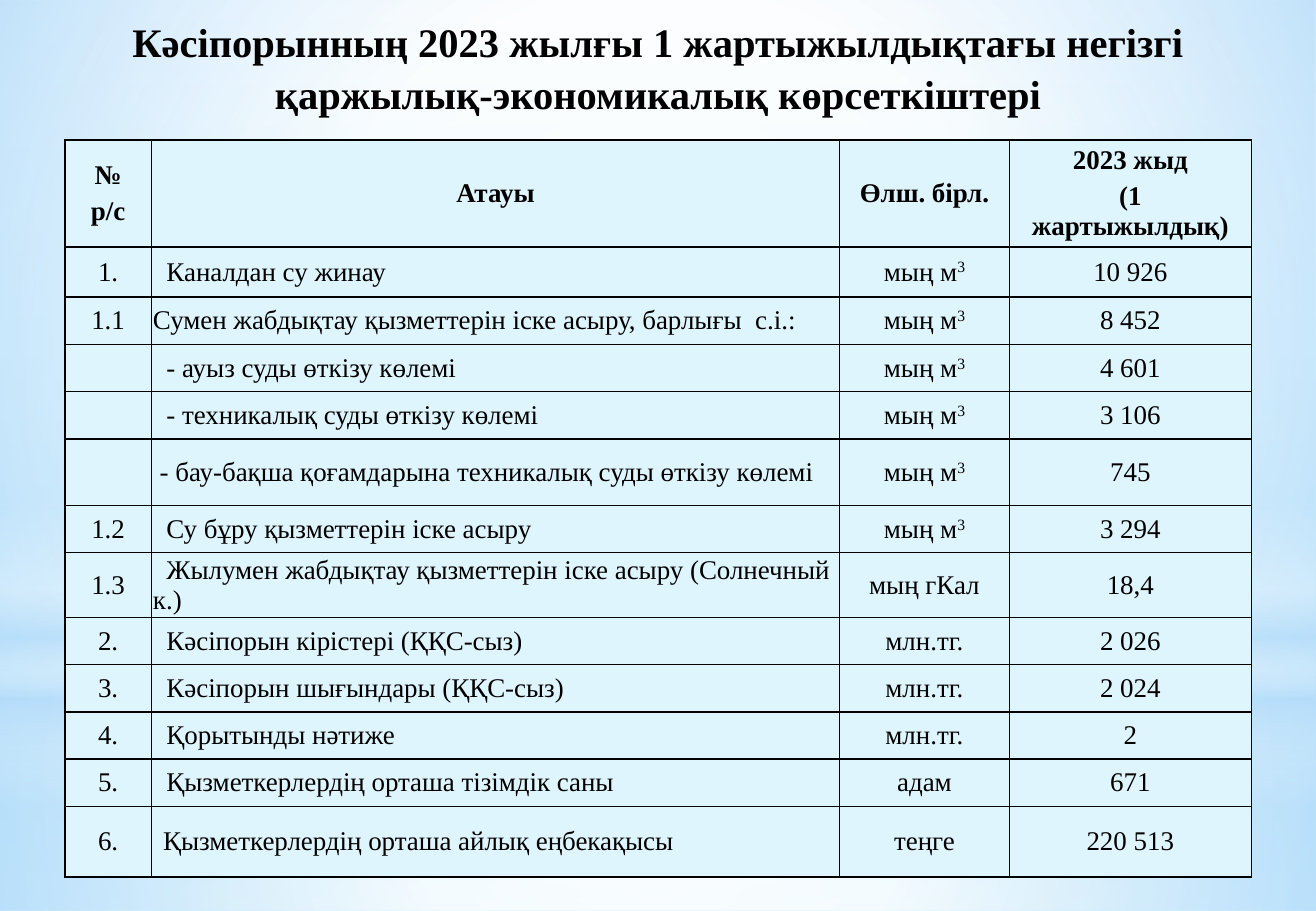
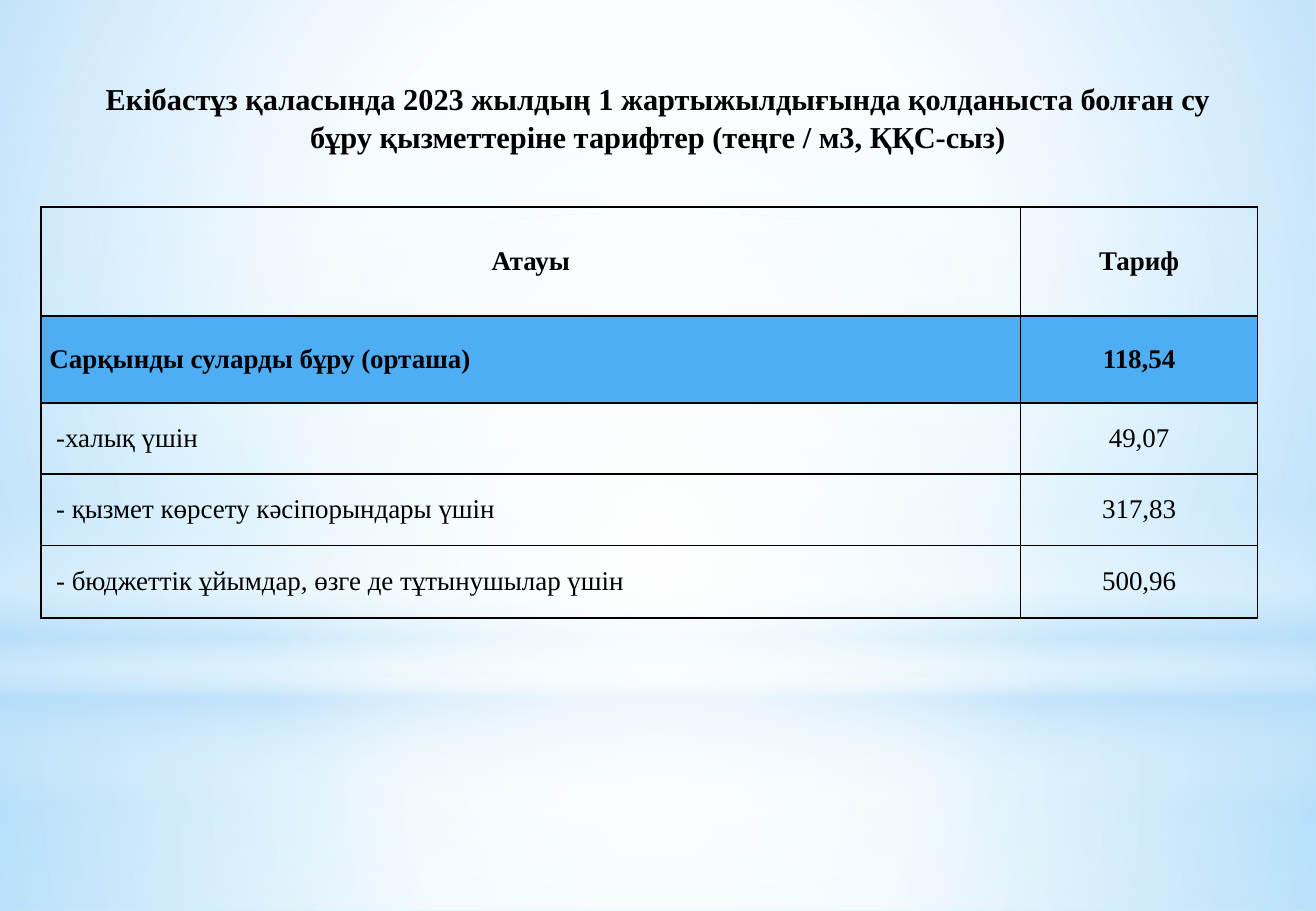
from lxml import etree
from pptx import Presentation
from pptx import util as u
from pptx.dml.color import RGBColor
from pptx.enum import shapes, text
from pptx.oxml.ns import qn

Pt = u.Pt
COLORS = {
    "text": "000000", "line": "000000", "cell": "DFF5FD", "accent": "4FADF3",
    "white": "FFFFFF", "sky": "B4DCFA", "pale": "F7FCFE", "aqua": "B7E8FA", "mist": "CFF0FB",
}
FONT = "Times New Roman"
WIDTH, HEIGHT = 780, 540
LEFT, CENTER = text.PP_ALIGN.LEFT, text.PP_ALIGN.CENTER


def write(tf, content, size=16, bold=False, align=CENTER, indent=0, before=0, spacing=None):
    tf.word_wrap = True
    for i, line in enumerate(content.split("\n")):
        p = tf.paragraphs[0] if i == 0 else tf.add_paragraph()
        p.alignment = align
        p.space_before = Pt(before)
        p.line_spacing = spacing
        if indent:
            p._p.get_or_add_pPr().set("indent", str(Pt(indent)))
        base, _, power = line.partition("^")
        for part in filter(None, (base, power)):
            r = p.add_run()
            r.text = part
            r.font.name, r.font.size, r.font.bold = FONT, Pt(size), bold
            r.font.color.rgb = RGBColor.from_string(COLORS["text"])
        if power:
            r.font._element.set("baseline", "30000")


def gradient(fill, stops, circle=False):
    fill.gradient()
    grad = fill._fill._gradFill
    for child in list(grad):
        grad.remove(child)
    stop_list = etree.SubElement(grad, qn("a:gsLst"))
    for pos, color, alpha in stops:
        gs = etree.SubElement(stop_list, qn("a:gs"), pos=str(pos * 1000))
        clr = etree.SubElement(gs, qn("a:srgbClr"), val=COLORS[color])
        etree.SubElement(clr, qn("a:alpha"), val=str(alpha * 1000))
    if circle:
        route = etree.SubElement(grad, qn("a:path"), path="circle")
        etree.SubElement(route, qn("a:fillToRect"), {k: "50000" for k in "ltrb"})
    else:
        etree.SubElement(grad, qn("a:lin"), ang="5400000", scaled="0")


class Deck:
    def __init__(self):
        self.prs = Presentation()
        self.prs.slide_width, self.prs.slide_height = Pt(WIDTH), Pt(HEIGHT)
        self.layout = self.prs.slide_layouts[6]
        self.s = None

    def slide(self):
        first = self.s is None
        self.s = self.prs.slides.add_slide(self.layout)
        if first:
            self.backdrop()

    def backdrop(self):
        gradient(self.layout.background.fill, [
            (0, "pale", 100), (74, "aqua", 100), (83, "aqua", 100), (100, "mist", 100)])
        rect, oval = shapes.MSO_SHAPE.RECTANGLE, shapes.MSO_SHAPE.OVAL
        self.glow(rect, 402, 138, [(0, "white", 91), (37, "white", 76), (100, "sky", 79)], True)
        self.glow(rect, 0, 402, [(0, "white", 89), (48, "white", 62), (100, "sky", 79)], True)
        self.glow(rect, 297, 180, [(0, "white", 0), (29, "white", 30), (45, "sky", 40),
                                   (55, "white", 26), (65, "sky", 60), (100, "white", 0)])
        self.glow(oval, 126, 402, [(0, "white", 100), (56, "white", 0)], True)

    def glow(self, kind, top, height, stops, circle=False):
        sp = self.s.shapes.add_shape(kind, 0, Pt(top), Pt(WIDTH), Pt(height))
        sp.shadow.inherit = False
        sp.line.fill.background()
        gradient(sp.fill, stops, circle)
        self.layout.shapes._spTree.append(sp._element)

    def title(self, content, left, top, width, height, size, spacing):
        sp = self.s.shapes.add_textbox(Pt(left), Pt(top), Pt(width), Pt(height))
        write(sp.text_frame, content, size=size, bold=True, spacing=spacing)

    def table(self, left, top, widths, heights):
        frame = self.s.shapes.add_table(len(heights), len(widths), Pt(left), Pt(top),
                                        Pt(sum(widths)), Pt(sum(heights)))
        table = frame.table
        table.first_row = table.horz_banding = False
        for col, width in zip(table.columns, widths):
            col.width = Pt(width)
        for row, height in zip(table.rows, heights):
            row.height = Pt(height)
        return table

    def cell(self, cell, content, fill=None, margin=1, **fmt):
        cell.vertical_anchor = text.MSO_ANCHOR.MIDDLE
        cell.margin_left = cell.margin_right = Pt(margin)
        cell.margin_top = cell.margin_bottom = 0
        tcPr = cell._tc.get_or_add_tcPr()
        for side in "LRTB":
            ln = etree.SubElement(tcPr, qn(f"a:ln{side}"), w=str(Pt(1)))
            solid = etree.SubElement(ln, qn("a:solidFill"))
            etree.SubElement(solid, qn("a:srgbClr"), val=COLORS["line"])
        if fill:
            cell.fill.solid()
            cell.fill.fore_color.rgb = RGBColor.from_string(COLORS[fill])
        else:
            cell.fill.background()
        write(cell.text_frame, content, **fmt)


INDICATOR_HEADER = ("№\nр/с", "Атауы", "Өлш. бірл.", "2023 жыд\n(1 жартыжылдық)")
INDICATORS = [
    (29.6, 8, "1.", "Каналдан су жинау", "мың м^3", "10 926"),
    (28.2, 0, "1.1", "Сумен жабдықтау қызметтерін іске асыру, барлығы  с.і.:", "мың м^3", "8 452"),
    (28, 8, "", "- ауыз суды өткізу көлемі", "мың м^3", "4 601"),
    (28, 8, "", "- техникалық суды өткізу көлемі", "мың м^3", "3 106"),
    (39.5, 4, "", "- бау-бақша қоғамдарына техникалық суды өткізу көлемі", "мың м^3", "745"),
    (28, 8, "1.2", "Су бұру қызметтерін іске асыру", "мың м^3", "3 294"),
    (36.8, 8, "1.3", "Жылумен жабдықтау қызметтерін іске асыру (Солнечный к.)", "мың гКал", "18,4"),
    (28, 8, "2.", "Кәсіпорын кірістері (ҚҚС-сыз)", "млн.тг.", "2 026"),
    (28, 8, "3.", "Кәсіпорын шығындары (ҚҚС-сыз)", "млн.тг.", "2 024"),
    (28, 8, "4.", "Қорытынды нәтиже", "млн.тг.", "2"),
    (28, 8, "5.", "Қызметкерлердің орташа тізімдік саны", "адам", "671"),
    (42, 6, "6.", "Қызметкерлердің орташа айлық еңбекақысы", "теңге", "220 513"),
]
TARIFFS = [
    (64.8, 0, "Атауы", "Тариф"),
    (51.5, 0, "Сарқынды суларды бұру (орташа)", "118,54"),
    (42.2, 4, "-халық үшін", "49,07"),
    (42.2, 4, "- қызмет көрсету кәсіпорындары үшін", "317,83"),
    (43, 4, "- бюджеттік ұйымдар, өзге де тұтынушылар үшін", "500,96"),
]


def indicators(deck):
    deck.slide()
    deck.title("Кәсіпорынның 2023 жылғы 1 жартыжылдықтағы негізгі қаржылық-экономикалық көрсеткіштері",
               66, 5, 648, 65, 24, 1.06)
    table = deck.table(38.5, 83, (51.2, 408, 100.6, 143.4),
                       [63.4] + [row[0] for row in INDICATORS])
    for j, content in enumerate(INDICATOR_HEADER):
        deck.cell(table.cell(0, j), content, "cell", margin=8, bold=True, before=3.2)
    for i, (_, indent, *contents) in enumerate(INDICATORS, 1):
        for j, content in enumerate(contents):
            fmt = {"align": LEFT, "indent": indent} if j == 1 else {}
            deck.cell(table.cell(i, j), content, "cell", **fmt)


def tariffs(deck):
    deck.slide()
    deck.title("Екібастұз қаласында 2023 жылдың 1 жартыжылдығында қолданыста болған су бұру "
               "қызметтеріне тарифтер (теңге / м3, ҚҚС-сыз)", 39, 43.5, 702, 79, 18, 1.03)
    table = deck.table(24.3, 122.6, (580.7, 140.4), [row[0] for row in TARIFFS])
    for i, (_, indent, *contents) in enumerate(TARIFFS):
        for j, content in enumerate(contents):
            fmt = {"align": LEFT, "indent": indent} if i and j == 0 else {}
            deck.cell(table.cell(i, j), content, "accent" if i == 1 else None,
                      margin=5, bold=i < 2, **fmt)


def main():
    deck = Deck()
    indicators(deck)
    tariffs(deck)
    deck.prs.save("out.pptx")


if __name__ == "__main__":
    main()
